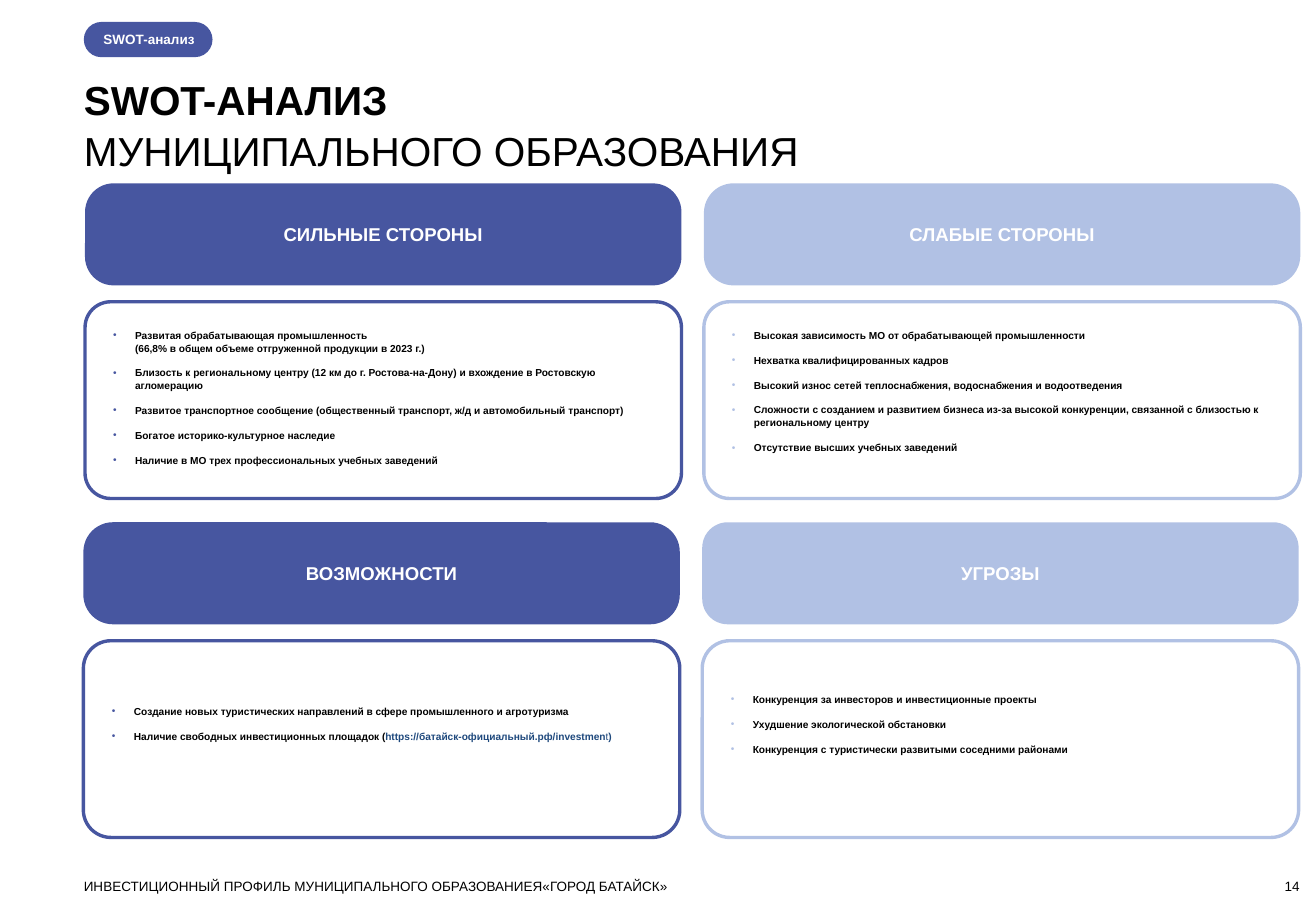
"""Builds the SWOT analysis slide of a municipal investment profile."""
from pptx import Presentation
from pptx.dml.color import RGBColor
from pptx.enum.shapes import MSO_SHAPE as Shape
from pptx.enum.text import MSO_ANCHOR as Anchor, MSO_AUTO_SIZE as AutoSize, PP_ALIGN as Align
from pptx.oxml import parse_xml
from pptx.oxml.ns import nsdecls
from pptx.util import Pt

rgb = RGBColor.from_string
BLUE, PALE, WHITE, BLACK, LINK = "4756A0", "B1C1E4", "FFFFFF", "000000", "1F497D"


def write(frame, paragraphs, size, align=Align.LEFT, anchor=Anchor.TOP,
          margins=(0, 0, 0, 0), gap=0, spacing=1.0, bullet=None):
    """Fill a frame with paragraphs, each a list of (text, colour, bold) runs."""
    left, top, right, bottom = map(Pt, margins)
    settings = dict(word_wrap=True, auto_size=AutoSize.NONE, vertical_anchor=anchor,
                    margin_left=left, margin_top=top, margin_right=right, margin_bottom=bottom)
    for name, value in settings.items():
        setattr(frame, name, value)
    for number, runs in enumerate(paragraphs):
        paragraph = frame.add_paragraph() if number else frame.paragraphs[0]
        if bullet:
            properties = paragraph._p.get_or_add_pPr()
            properties.set("marL", str(Pt(13.7)))
            properties.set("indent", str(Pt(-13)))
            for tag in (f'<a:buClr {nsdecls("a")}><a:srgbClr val="{bullet}"/></a:buClr>',
                        f'<a:buFont {nsdecls("a")} typeface="Arial"/>',
                        f'<a:buChar {nsdecls("a")} char="•"/>'):
                properties.append(parse_xml(tag))
        paragraph.alignment = align
        paragraph.line_spacing = spacing
        paragraph.space_before = Pt(gap if number else 0)
        for text, colour, bold in runs:
            for part, line in enumerate(text.split("\n")):
                if part:
                    paragraph.add_line_break()
                run = paragraph.add_run()
                run.text = line
                for name, value in dict(name="Arial", size=Pt(size), bold=bold).items():
                    setattr(run.font, name, value)
                run.font.color.rgb = rgb(colour)


def rounded(left, top, width, height, corner, fill=None, outline=None):
    """Add a rounded rectangle and return its text frame."""
    shape = slide.shapes.add_shape(Shape.ROUNDED_RECTANGLE, Pt(left), Pt(top), Pt(width), Pt(height))
    shape.shadow.inherit = False
    shape.adjustments[0] = corner
    if fill:
        shape.fill.solid()
        shape.fill.fore_color.rgb = rgb(fill)
    else:
        shape.fill.background()
    if outline:
        shape.line.color.rgb = rgb(outline)
        shape.line.width = Pt(2)
    else:
        shape.line.fill.background()
    return shape.text_frame


deck = Presentation()
deck.slide_width, deck.slide_height = Pt(780), Pt(540)
slide = deck.slides.add_slide(deck.slide_layouts[5])

title = slide.shapes.title
title.left, title.top, title.width, title.height = Pt(49.7), Pt(43.2), Pt(720.7), Pt(56.9)
write(title.text_frame, [[("SWOT-АНАЛИЗ", BLACK, True)],
                         [("МУНИЦИПАЛЬНОГО ОБРАЗОВАНИЯ", BLACK, False)]], 24, spacing=1.05)

section_tag = rounded(49.7, 13, 76.3, 20.9, 0.5, fill=BLUE)
write(section_tag, [[("SWOT-анализ", WHITE, True)]], 8, anchor=Anchor.MIDDLE, margins=(8.6, 0, 0, 0))

quadrants = [
    ("СИЛЬНЫЕ СТОРОНЫ", BLUE, 50.4, 108.7, 0.28, 0.13, 0, [
        "Развитая обрабатывающая промышленность\n(66,8% в общем объеме отгруженной продукции в 2023 г.)",
        "Близость к региональному центру (12 км до г. Ростова-на-Дону) и вхождение в Ростовскую агломерацию",
        "Развитое транспортное сообщение (общественный транспорт, ж/д и автомобильный транспорт)",
        "Богатое историко-культурное наследие",
        "Наличие в МО трех профессиональных учебных заведений"]),
    ("СЛАБЫЕ СТОРОНЫ", PALE, 417.2, 108.7, 0.29, 0.13, 0, [
        "Высокая зависимость МО от обрабатывающей промышленности",
        "Нехватка квалифицированных кадров",
        "Высокий износ сетей теплоснабжения, водоснабжения и водоотведения",
        "Сложности с созданием и развитием бизнеса из-за высокой конкуренции, "
        "связанной с близостью к региональному центру",
        "Отсутствие высших учебных заведений"]),
    ("ВОЗМОЖНОСТИ", BLUE, 49.4, 309.6, 0.29, 0.14, 21.7, [
        "Создание новых туристических направлений в сфере промышленного и агротуризма",
        [("Наличие свободных инвестиционных площадок (", BLACK, True),
         ("https://батайск-официальный.рф/investmen", LINK, True),
         ("t", LINK, False), (")", LINK, True)]]),
    ("УГРОЗЫ", PALE, 416.2, 309.6, 0.25, 0.14, 14.5, [
        "Конкуренция за инвесторов и инвестиционные проекты",
        "Ухудшение экологической обстановки",
        "Конкуренция с туристически развитыми соседними районами"]),
]
for heading, colour, left, top, head_corner, body_corner, drop, points in quadrants:
    head = rounded(left, top, 353.5, 60.5, head_corner, fill=colour)
    write(head, [[(heading, WHITE, True)]], 11, Align.CENTER, Anchor.MIDDLE, (7.2, 3.6, 7.2, 3.6))
    body = rounded(left, top + 70.2, 353.5, 116.6, body_corner, outline=colour)
    factors = [[(point, BLACK, True)] if isinstance(point, str) else point for point in points]
    write(body, factors, 6, margins=(11.5, 11.5 + drop, 11.5, 3.6), gap=7.2, spacing=1.05, bullet=colour)

for text, left, width, align, anchor in [
        ("ИНВЕСТИЦИОННЫЙ ПРОФИЛЬ МУНИЦИПАЛЬНОГО ОБРАЗОВАНИЕЯ«ГОРОД БАТАЙСК»",
         49.7, 576, Align.LEFT, Anchor.TOP),
        ("14", 713.5, 56.9, Align.RIGHT, Anchor.BOTTOM)]:
    footer = slide.shapes.add_textbox(Pt(left), Pt(520.6), Pt(width), Pt(9.4))
    write(footer.text_frame, [[(text, BLACK, False)]], 8, align, anchor)

deck.save("out.pptx")
